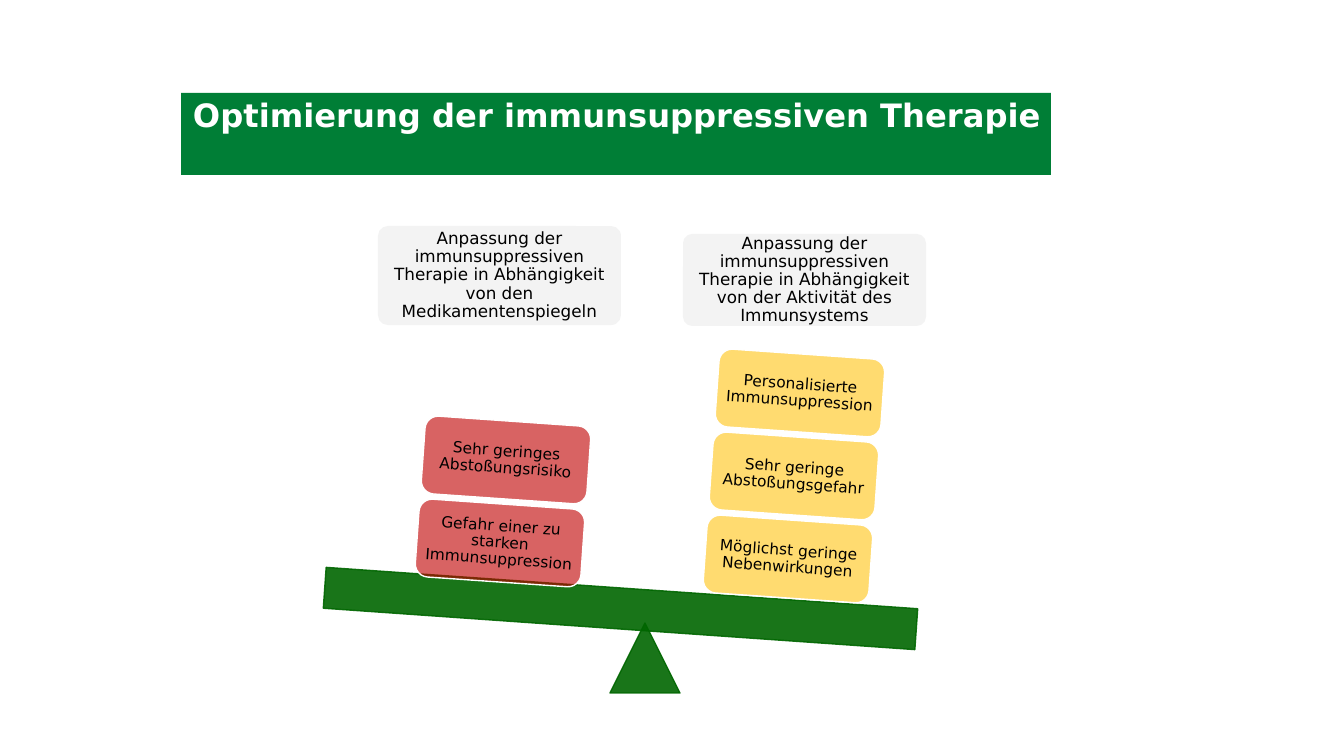
from lxml import etree
from pptx import Presentation
from pptx import util as u
from pptx.dml.color import RGBColor
from pptx.enum import shapes, text
from pptx.oxml.ns import qn

SCALE = 914400 / 100.8
FONT = "DejaVu Sans"
TILT = 4


def px(n):
    return u.Emu(round(n * SCALE))


def paint(fill, color, alpha=100):
    fill.solid()
    fill.fore_color.rgb = RGBColor.from_string(color)
    if alpha < 100:
        for clr in fill._xPr.iter(qn("a:srgbClr")):
            etree.SubElement(clr, qn("a:alpha"), val=str(alpha * 1000))


def write(shape, words, size, color, align, anchor, pads):
    frame = shape.text_frame
    frame.text = words
    frame.word_wrap = True
    frame.auto_size = text.MSO_AUTO_SIZE.NONE
    frame.vertical_anchor = anchor
    frame.margin_left, frame.margin_top, frame.margin_right, frame.margin_bottom = map(px, pads)
    para = frame.paragraphs[0]
    para.alignment = align
    para.font.name = FONT
    para.font.size = u.Pt(size)
    para.font.color.rgb = RGBColor.from_string(color)
    return para


def add_part(slide, kind, box, color, alpha, edge=None, clear=100, turn=0):
    part = slide.shapes.add_shape(kind, *map(px, box))
    part.shadow.inherit = False
    part.rotation = turn
    paint(part.fill, color, alpha)
    if edge:
        paint(part.line.fill, edge, clear)
        part.line.width = u.Pt(1)
    else:
        part.line.fill.background()
    return part


def add_label(part, words, size):
    para = write(part, words, size, "000000", text.PP_ALIGN.CENTER,
                 text.MSO_ANCHOR.MIDDLE, (5, 5, 5, 5))
    para.line_spacing = 0.9


def add_title(slide, box, words):
    title = slide.shapes.title
    title.left, title.top, title.width, title.height = map(px, box)
    paint(title.fill, "007E36")
    para = write(title, words, 23, "FFFFFF", text.PP_ALIGN.LEFT,
                 text.MSO_ANCHOR.TOP, (12, 2, 8, 2))
    para.font.bold = True
    title.text_frame.word_wrap = False


def add_head(slide, box, words):
    head = add_part(slide, shapes.MSO_SHAPE.ROUNDED_RECTANGLE, box, "F2F2F2", 90)
    head.adjustments[0] = 0.1
    add_label(head, words, 12)


def add_scale(slide, box):
    left, top, width, height = box
    green = "006600"
    add_part(slide, shapes.MSO_SHAPE.ISOSCELES_TRIANGLE,
             (left + 286, top + 35, 70, 70), green, 90, green, 90)
    add_part(slide, shapes.MSO_SHAPE.RECTANGLE,
             (left, top, width, height), green, 90, green, 90, TILT)


def add_stack(slide, box, color, alpha, labels):
    left, top, width, height = box
    for i, words in enumerate(labels):
        block = add_part(slide, shapes.MSO_SHAPE.ROUNDED_RECTANGLE,
                         (left + 6 * i, top - 83 * i, width, height),
                         color, alpha, "FFFFFF", turn=TILT)
        add_label(block, words, 11)


def main():
    deck = Presentation()
    deck.slide_width, deck.slide_height = px(1344), px(756)
    slide = deck.slides.add_slide(deck.slide_layouts[5])
    add_title(slide, (181, 93, 870, 82), "Optimierung der immunsuppressiven Therapie")
    lead = "Anpassung der immunsuppressiven Therapie in Abhängigkeit von "
    add_head(slide, (378, 226, 243, 99), lead + "den Medikamentenspiegeln")
    add_head(slide, (683, 234, 243, 92), lead + "der Aktivität des Immunsystems")
    add_scale(slide, (324, 588, 593, 41))
    add_stack(slide, (705, 520, 166, 78), "FFC000", 56, [
        "Möglichst geringe Nebenwirkungen",
        "Sehr geringe Abstoßungsgefahr",
        "Personalisierte Immunsuppression",
    ])
    add_stack(slide, (417, 504, 166, 78), "C00000", 61, [
        "Gefahr einer zu starken Immunsuppression",
        "Sehr geringes Abstoßungsrisiko",
    ])
    deck.save("out.pptx")


if __name__ == "__main__":
    main()
